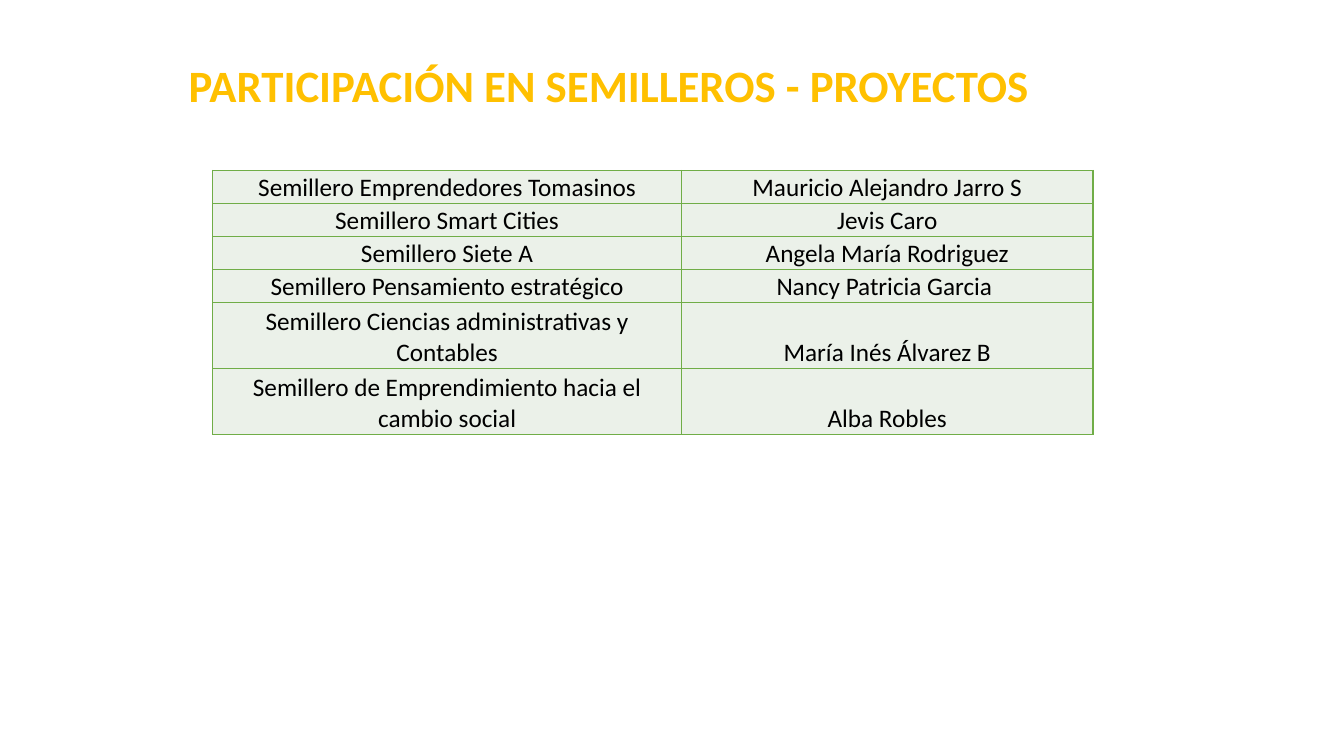
from lxml import etree
from pptx import Presentation
from pptx.dml.color import RGBColor
from pptx.enum.text import MSO_ANCHOR, MSO_AUTO_SIZE, PP_ALIGN
from pptx.oxml.ns import qn
from pptx.util import Inches, Pt

LEFT, CENTER = PP_ALIGN.LEFT, PP_ALIGN.CENTER
TOP, BOTTOM = MSO_ANCHOR.TOP, MSO_ANCHOR.BOTTOM
NO_AUTOFIT = MSO_AUTO_SIZE.NONE
TITLE_ONLY = 5

FONT = "Calibri"
GOLD, BLACK, GREEN, PALE_GREEN = "FFC000", "000000", "70AD47", "EBF1E9"

TITLE_BOX = (1.77, 0.52, 9.22, 0.64)
TABLE_BOX = (2.11, 1.69, 8.73, 2.62)
FIRST_COLUMN_WIDTH = 4.65
ROW_LINES = (1, 1, 1, 1, 2, 2)  # text lines in each row
SEMILLEROS = (
    ("Semillero Emprendedores Tomasinos", "Mauricio Alejandro Jarro S"),
    ("Semillero Smart Cities", "Jevis Caro"),
    ("Semillero Siete A", "Angela María Rodriguez"),
    ("Semillero Pensamiento estratégico", "Nancy Patricia Garcia "),
    ("Semillero Ciencias administrativas y Contables", "María Inés Álvarez B"),
    ("Semillero de Emprendimiento hacia el cambio social", "Alba Robles"),
)


def color(hex_value):
    return RGBColor.from_string(hex_value)


def write(frame, text, size=18, fill=BLACK, bold=False, align=CENTER):
    para = frame.paragraphs[0]
    para.alignment = align
    span = para.add_run()
    span.text = text
    span.font.name = FONT
    span.font.size = Pt(size)
    span.font.bold = bold
    span.font.color.rgb = color(fill)


def add_borders(cell, hex_value, width=1):
    properties = cell._tc.get_or_add_tcPr()
    for side in ("a:lnL", "a:lnR", "a:lnT", "a:lnB"):
        line = etree.SubElement(properties, qn(side), w=str(Pt(width)))
        fill = etree.SubElement(line, qn("a:solidFill"))
        etree.SubElement(fill, qn("a:srgbClr"), val=hex_value)


def place_title(page, box):
    title = page.shapes.title
    title.left, title.top, title.width, title.height = map(Inches, box)
    frame = title.text_frame
    frame.word_wrap = True
    frame.auto_size = NO_AUTOFIT
    frame.vertical_anchor = TOP
    write(frame, "PARTICIPACIÓN EN SEMILLEROS - PROYECTOS",
          size=32, fill=GOLD, bold=True, align=LEFT)
    frame.paragraphs[0].line_spacing = 1.0


def fill_cell(cell, text):
    cell.margin_left = cell.margin_right = Inches(0.03)
    cell.margin_top = cell.margin_bottom = 0
    cell.vertical_anchor = BOTTOM
    add_borders(cell, GREEN)
    cell.fill.solid()
    cell.fill.fore_color.rgb = color(PALE_GREEN)
    write(cell.text_frame, text)


def place_table(page, box):
    width, height = box[2:]
    table = page.shapes.add_table(
        len(SEMILLEROS), 2, *map(Inches, box)).table
    table.first_row = table.horz_banding = False
    table.columns[0].width = Inches(FIRST_COLUMN_WIDTH)
    table.columns[1].width = Inches(width - FIRST_COLUMN_WIDTH)
    line_height = height / sum(ROW_LINES)
    for row, lines, texts in zip(table.rows, ROW_LINES, SEMILLEROS):
        row.height = Inches(line_height * lines)
        for cell, text in zip(row.cells, texts):
            fill_cell(cell, text)


def main():
    deck = Presentation()
    deck.slide_width, deck.slide_height = Inches(13.33), Inches(7.5)
    page = deck.slides.add_slide(deck.slide_layouts[TITLE_ONLY])
    # Heading
    place_title(page, TITLE_BOX)
    # Research groups and their leaders
    place_table(page, TABLE_BOX)
    deck.save("out.pptx")


if __name__ == "__main__":
    main()
